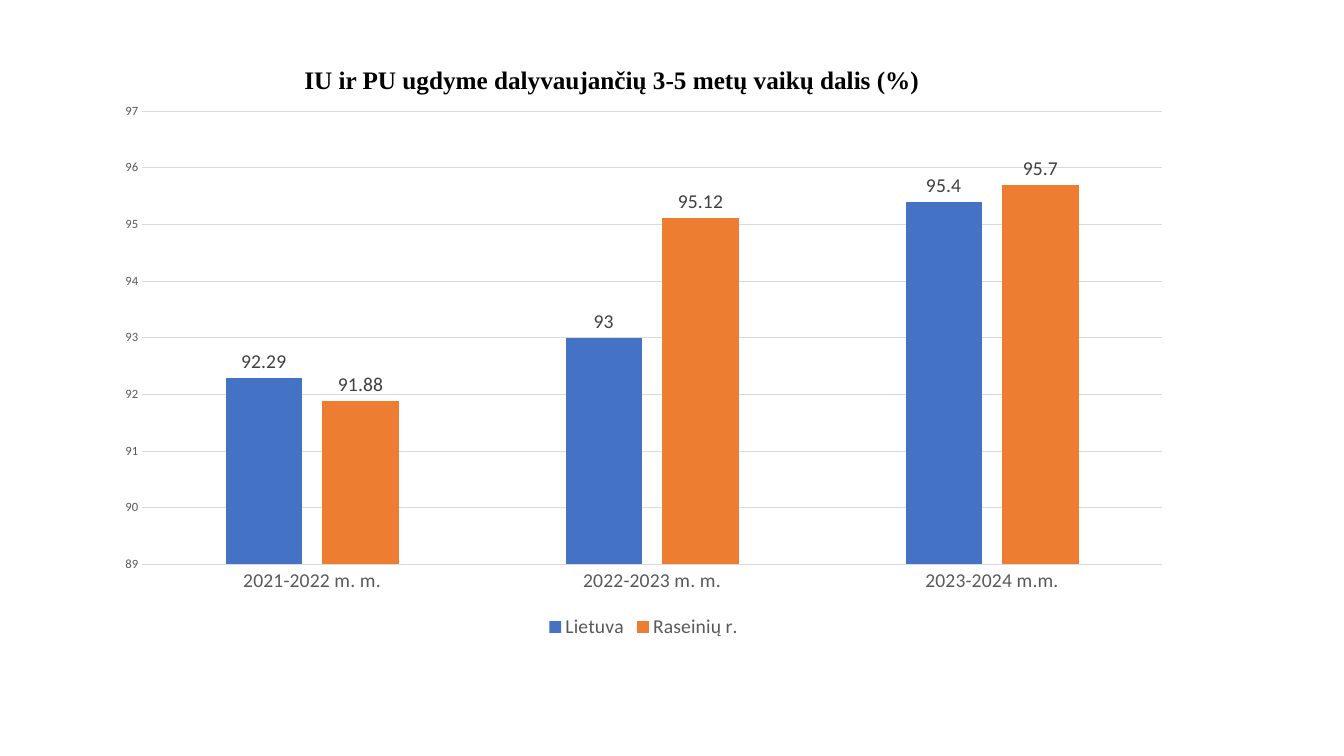
from pptx import Presentation
from pptx.chart.data import CategoryChartData
from pptx.dml.color import RGBColor
from pptx.enum.chart import (XL_CHART_TYPE, XL_LABEL_POSITION,
                             XL_LEGEND_POSITION, XL_TICK_MARK)
from pptx.enum.text import MSO_AUTO_SIZE
from pptx.util import Inches, Pt

TITLE = "IU ir PU ugdyme dalyvaujančių 3-5 metų vaikų dalis (%)"
YEARS = ["2021-2022 m. m.", "2022-2023 m. m.", "2023-2024 m.m."]
SHARES = {
    "Lietuva": ("4472C4", (92.29, 93, 95.4)),
    "Raseinių r.": ("ED7D31", (91.88, 95.12, 95.7)),
}
GREY, DARK_GREY, GRID_GREY = "595959", "404040", "D9D9D9"


def color(hex_text):
    return RGBColor.from_string(hex_text)


def style_font(font, size, hex_text, name="Calibri", bold=False):
    values = {"size": Pt(size), "name": name, "bold": bold}
    for attribute, value in values.items():
        setattr(font, attribute, value)
    font.color.rgb = color(hex_text)


def style_line(line):
    line.color.rgb = color(GRID_GREY)
    line.width = Pt(0.75)


def add_title(slide):
    title = slide.shapes.add_textbox(
        Inches(2.92), Inches(0.59), Inches(8.14), Inches(0.4))
    frame = title.text_frame
    frame.word_wrap = True
    frame.auto_size = MSO_AUTO_SIZE.SHAPE_TO_FIT_TEXT
    run = frame.paragraphs[0].add_run()
    run.text = TITLE
    style_font(run.font, 18, "000000", "Times New Roman", True)


def style_axes(chart):
    years, percents = chart.category_axis, chart.value_axis
    for axis, size in ((years, 14), (percents, 9)):
        axis.major_tick_mark = axis.minor_tick_mark = XL_TICK_MARK.NONE
        style_font(axis.tick_labels.font, size, GREY)
    style_line(years.format.line)

    scale = {"minimum_scale": 89, "maximum_scale": 97, "major_unit": 1}
    for attribute, value in scale.items():
        setattr(percents, attribute, value)
    percents.format.line.fill.background()
    style_line(percents.major_gridlines.format.line)


def style_columns(plot):
    plot.gap_width, plot.overlap = 219, -27
    plot.vary_by_categories = False
    for region in plot.series:
        region.format.fill.solid()
        region.format.fill.fore_color.rgb = color(SHARES[region.name][0])
        region.invert_if_negative = False
        labels = region.data_labels
        labels.show_value = True
        labels.position = XL_LABEL_POSITION.OUTSIDE_END
        style_font(labels.font, 14, DARK_GREY)


def add_share_chart(slide):
    data = CategoryChartData()
    data.categories = YEARS
    for region, (_, values) in SHARES.items():
        data.add_series(region, values)
    chart = slide.shapes.add_chart(
        XL_CHART_TYPE.COLUMN_CLUSTERED, Inches(1.03), Inches(0.92),
        Inches(10.71), Inches(5.46), data).chart
    chart.has_title = False
    style_font(chart.font, 10, "000000")
    style_axes(chart)
    style_columns(chart.plots[0])

    # Legend
    chart.has_legend = True
    chart.legend.position = XL_LEGEND_POSITION.BOTTOM
    chart.legend.include_in_layout = False
    style_font(chart.legend.font, 14, GREY)


def main():
    deck = Presentation()
    deck.slide_width, deck.slide_height = Inches(13.33), Inches(7.5)
    slide = deck.slides.add_slide(deck.slide_layouts[6])

    # Columns by school year, then the heading above them
    add_share_chart(slide)
    add_title(slide)
    deck.save("out.pptx")


if __name__ == "__main__":
    main()
